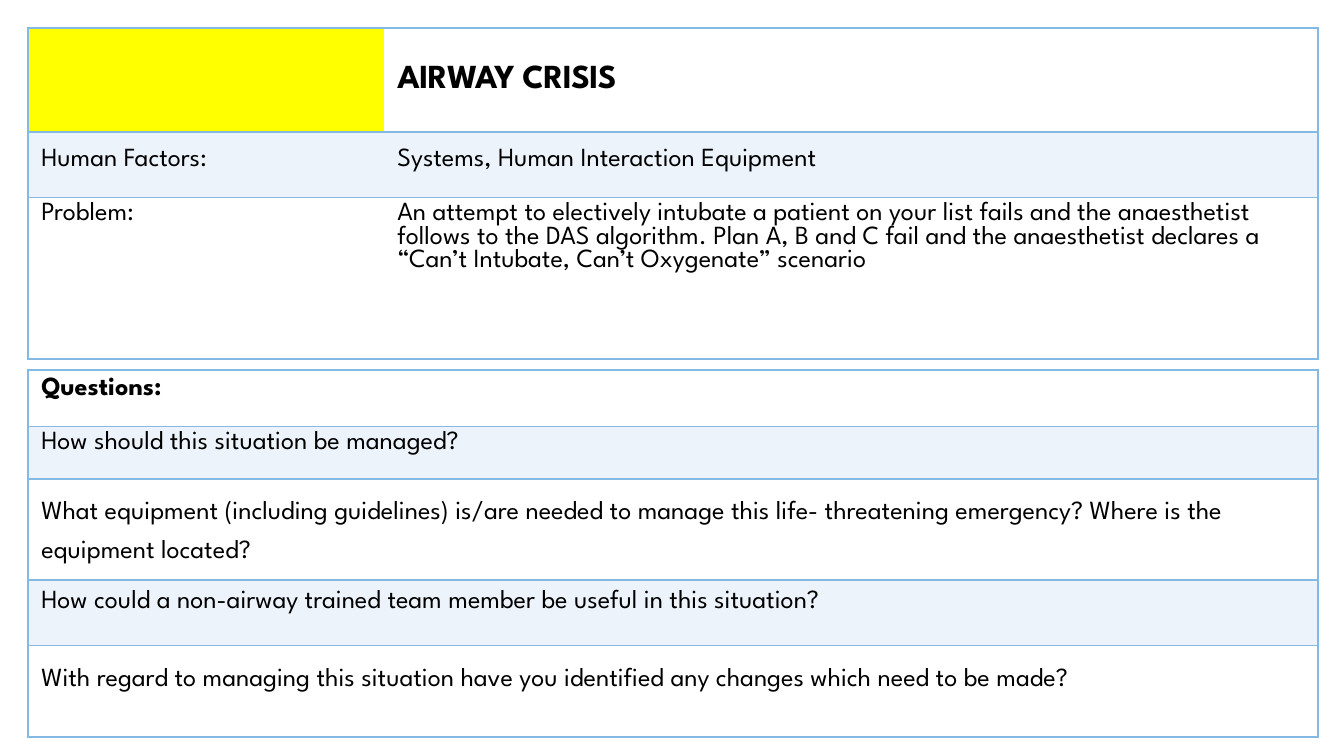
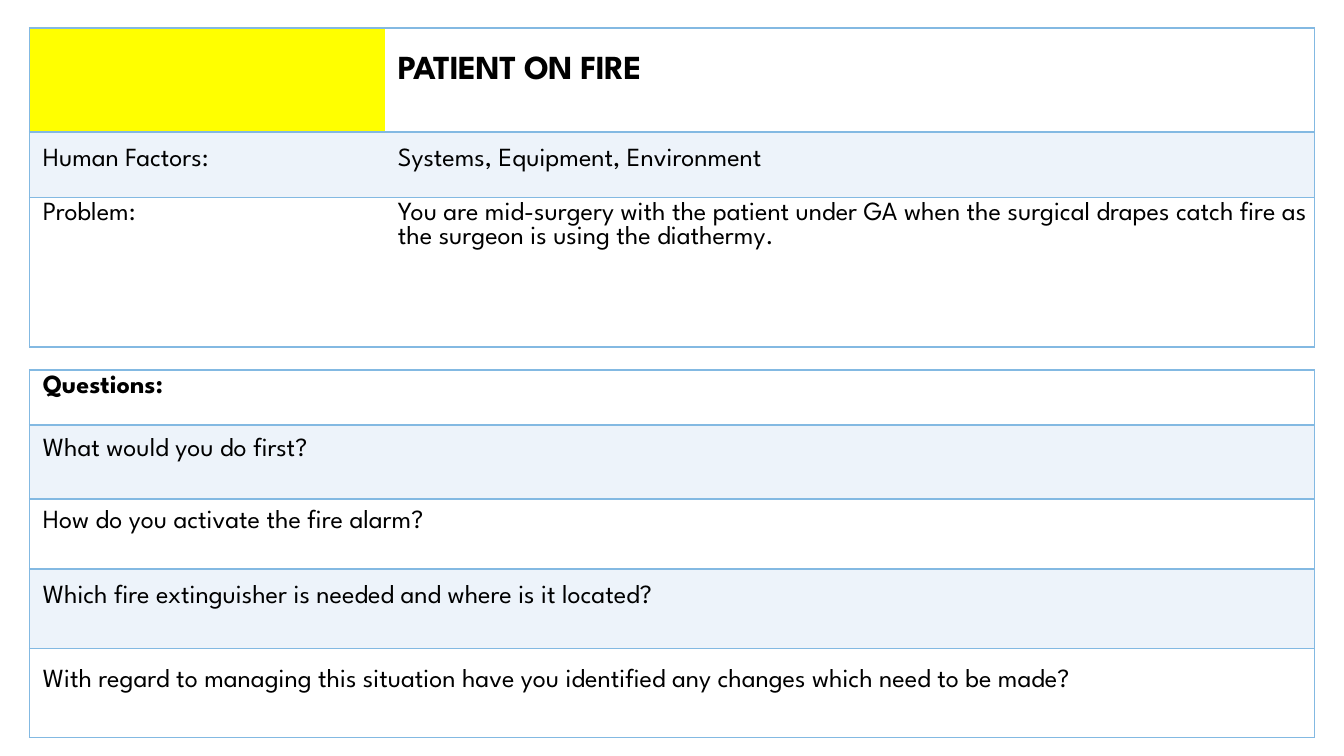
from lxml import etree
from pptx import Presentation
from pptx.dml.color import RGBColor
from pptx.enum.text import MSO_ANCHOR
from pptx.oxml.ns import qn
from pptx.util import Cm, Pt

MIDDLE = MSO_ANCHOR.MIDDLE
FONT = "League Spartan"
HEX = {"ink": "000000", "line": "83B9E2", "flag": "FFFF00",
       "band": "EDF3FA", "plain": "FFFFFF"}
TOP, ASK_TOP, INDENT = 0.53, 6.99, 0.25
CHANGES = ("With regard to managing this situation have you identified any "
           "changes which need to be made?")

CARDS = [
    {
        "left": 0.53, "cols": (6.73, 17.65),
        "title": ("AIRWAY CRISIS", None),
        "factors": "Systems, Human Interaction Equipment",
        "problem": "An attempt to electively intubate a patient on your list fails "
                   "and the anaesthetist follows to the DAS algorithm. Plan A, B and C "
                   "fail and the anaesthetist declares a “Can’t Intubate, Can’t "
                   "Oxygenate” scenario",
        "rows": (1.96, 1.24, 3.05),
        "asks": [
            ("Questions:", 1.07, 0.13, None),
            ("How should this situation be managed?", 0.99, 0.08, None),
            ("What equipment (including guidelines) is/are needed to manage this "
             "life- threatening emergency? Where is the equipment located?",
             1.9, 0.13, Pt(21)),
            ("How could a non-airway trained team member be useful in this situation?",
             1.24, 0.2, None),
            (CHANGES, 1.73, 0.15, Pt(21)),
        ],
    },
    {
        "left": 0.56, "cols": (6.71, 17.57),
        "title": ("PATIENT ON FIRE", 0.53),
        "factors": "Systems, Equipment, Environment",
        "problem": "You are mid-surgery with the patient under GA when the surgical "
                   "drapes catch fire as the surgeon is using the diathermy.",
        "rows": (1.96, 1.24, 2.82),
        "asks": [
            ("Questions:", 1.04, 0.1, None),
            ("What would you do first?", 1.4, 0.25, None),
            ("How do you activate the fire alarm?", 1.32, 0.2, None),
            ("Which fire extinguisher is needed and where is it located?",
             1.5, 0.3, None),
            (CHANGES, 1.68, 0.1, Pt(21)),
        ],
    },
]


def add_grid(slide, left, top, cols, rows):
    frame = slide.shapes.add_table(len(rows), len(cols), Cm(left), Cm(top),
                                   Cm(sum(cols)), Cm(sum(rows)))
    grid = frame.table
    grid.first_row = grid.horz_banding = False
    for col, width in zip(grid.columns, cols):
        col.width = Cm(width)
    for row, height in zip(grid.rows, rows):
        row.height = Cm(height)
    last = len(cols) - 1
    for row in grid.rows:
        for i, cell in enumerate(row.cells):
            sides = {"L": i == 0, "R": i == last, "T": True, "B": True}
            draw_edges(cell, sides)
    return grid


def draw_edges(cell, sides):
    props = cell._tc.get_or_add_tcPr()
    for side, shown in sides.items():
        edge = etree.SubElement(props, qn("a:ln" + side), w=str(Pt(1)))
        if shown:
            fill = etree.SubElement(edge, qn("a:solidFill"))
            etree.SubElement(fill, qn("a:srgbClr"), val=HEX["line"])
        else:
            etree.SubElement(edge, qn("a:noFill"))


def paint(cell, tone):
    if tone:
        cell.fill.solid()
        cell.fill.fore_color.rgb = RGBColor.from_string(HEX[tone])
    else:
        cell.fill.background()


def write(cell, text, pad, size=14, bold=False, pitch=None):
    cell.margin_left, cell.margin_right, cell.margin_bottom = Cm(INDENT), 0, 0
    cell.margin_top = Cm(pad or 0)
    if pad is None:
        cell.vertical_anchor = MIDDLE
    para = cell.text_frame.paragraphs[0]
    para.text = text
    if pitch:
        para.line_spacing = pitch
    font = para.runs[0].font
    font.name, font.size, font.bold = FONT, Pt(size), bold
    font.color.rgb = RGBColor.from_string(HEX["ink"])
    return para.runs[0]


def add_case(slide, card):
    grid = add_grid(slide, card["left"], TOP, card["cols"], card["rows"])
    tones = [("flag", None), ("band", "band"), ("plain", "plain")]
    for r, pair in enumerate(tones):
        for c, tone in enumerate(pair):
            paint(grid.cell(r, c), tone)
    title, pad = card["title"]
    run = write(grid.cell(0, 1), title, pad, 18, True)
    run._r.get_or_add_rPr().set("spc", "-30")
    write(grid.cell(1, 0), "Human Factors:", 0.3)
    write(grid.cell(1, 1), card["factors"], 0.3)
    write(grid.cell(2, 0), "Problem:", 0.08)
    write(grid.cell(2, 1), card["problem"], 0.08, pitch=0.99)


def add_asks(slide, card):
    asks = card["asks"]
    grid = add_grid(slide, card["left"], ASK_TOP, [sum(card["cols"])],
                    [ask[1] for ask in asks])
    for r, (text, _, pad, pitch) in enumerate(asks):
        cell = grid.cell(r, 0)
        paint(cell, None if r == 0 else "band" if r % 2 else "plain")
        write(cell, text, pad, bold=r == 0, pitch=pitch)


def main():
    deck = Presentation()
    deck.slide_width, deck.slide_height = Cm(25.4), Cm(14.28)
    for card in CARDS:
        slide = deck.slides.add_slide(deck.slide_layouts[6])
        add_case(slide, card)
        add_asks(slide, card)
    deck.save("out.pptx")


if __name__ == "__main__":
    main()
